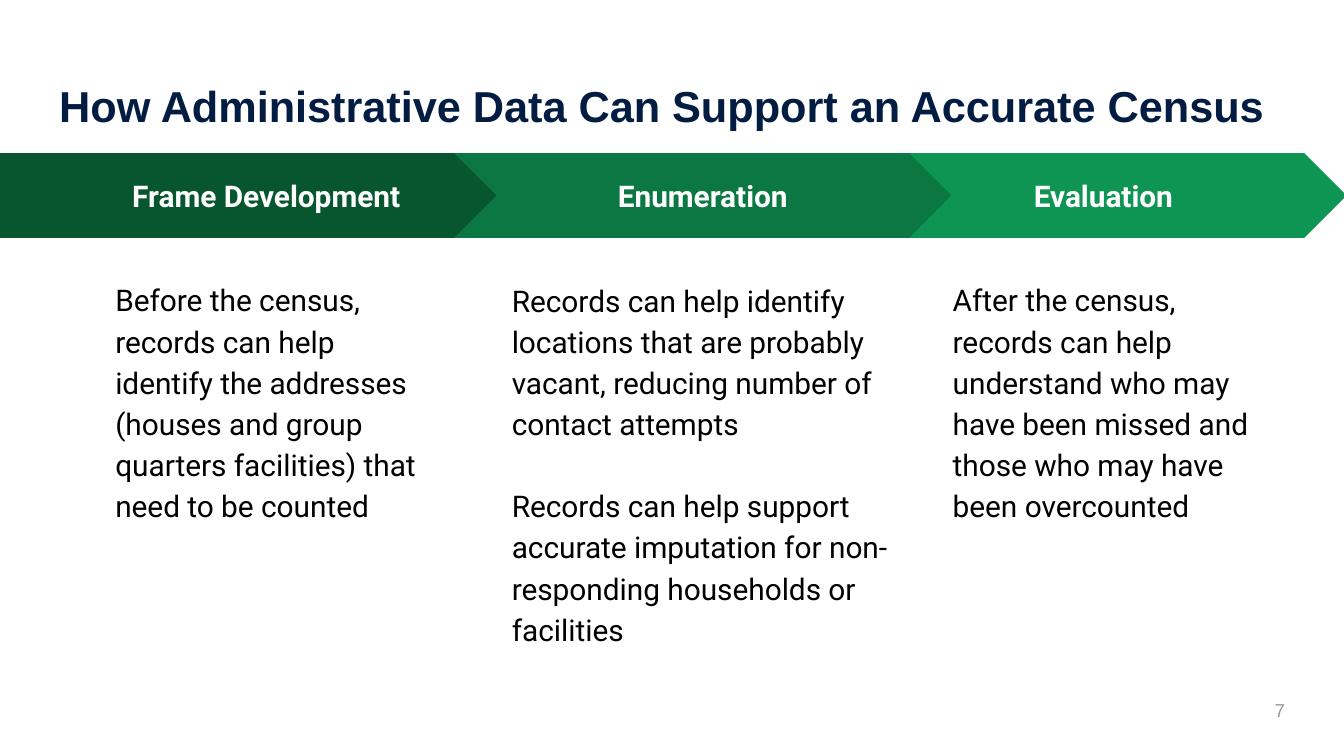
"""Build the slide on how administrative data can support an accurate census."""
from pptx import Presentation
from pptx.dml.color import RGBColor
from pptx.enum.shapes import MSO_SHAPE
from pptx.enum.text import MSO_ANCHOR, MSO_AUTO_SIZE, PP_ALIGN
from pptx.util import Inches, Pt

CHEVRON, PENTAGON = MSO_SHAPE.CHEVRON, MSO_SHAPE.PENTAGON
TOP, MIDDLE = MSO_ANCHOR.TOP, MSO_ANCHOR.MIDDLE
LEFT, CENTER, RIGHT = PP_ALIGN.LEFT, PP_ALIGN.CENTER, PP_ALIGN.RIGHT
NO_AUTOFIT = MSO_AUTO_SIZE.NONE

NAVY = RGBColor(0x02, 0x1C, 0x42)
DARK_GREEN = RGBColor(0x08, 0x56, 0x30)
MID_GREEN = RGBColor(0x0B, 0x77, 0x43)
LIGHT_GREEN = RGBColor(0x0E, 0x94, 0x53)
WHITE = RGBColor(0xFF, 0xFF, 0xFF)
BLACK = RGBColor(0x00, 0x00, 0x00)
GRAY = RGBColor(0x99, 0x99, 0x99)

SLIDE_WIDTH = Inches(10)
SLIDE_HEIGHT = SLIDE_WIDTH * 9 // 16
ARROW_TOP, ARROW_HEIGHT = 1.14, 0.63
BODY_TOP = 1.96

STAGES = [
    ("Evaluation", CHEVRON, LIGHT_GREEN, (6.4, 3.62), (6.99, 2.45, 2.47), [
        "After the census, records can help understand who may have been missed "
        "and those who may have been overcounted"]),
    ("Frame Development", PENTAGON, DARK_GREEN, (0, 4.12), (0.76, 2.6, 2.47), [
        "Before the census, records can help identify the addresses (houses and "
        "group quarters facilities) that need to be counted"]),
    ("Enumeration", CHEVRON, MID_GREEN, (3.38, 3.7), (3.71, 3.04, 3.29), [
        "Records can help identify locations that are probably vacant, reducing "
        "number of contact attempts",
        "Records can help support accurate imputation for non-responding "
        "households or facilities"]),
]


def prepare_frame(shape, anchor):
    """Set wrapping, insets and anchor, and return the text frame."""
    frame = shape.text_frame
    frame.word_wrap = True
    frame.auto_size = NO_AUTOFIT
    frame.vertical_anchor = anchor
    frame.margin_left = frame.margin_right = Inches(0.1)
    frame.margin_top = frame.margin_bottom = Inches(0.1)
    return frame


def add_run(paragraph, text, size, color, font="Roboto", bold=False, align=LEFT):
    """Add one formatted run to an aligned paragraph."""
    paragraph.alignment = align
    run = paragraph.add_run()
    run.text = text
    run.font.name = font
    run.font.size = Pt(size)
    run.font.bold = bold
    run.font.color.rgb = color


def set_title(slide, text):
    """Place and format the title placeholder."""
    title = slide.shapes.title
    title.left, title.top = Inches(0.34), Inches(0.49)
    title.width, title.height = Inches(9.32), Inches(0.63)
    frame = prepare_frame(title, TOP)
    add_run(frame.paragraphs[0], text, 23.2, NAVY, "Arial", bold=True)


def add_arrow(slide, preset, label, color, left, width):
    """Add one labelled stage arrow."""
    shape = slide.shapes.add_shape(
        preset, Inches(left), Inches(ARROW_TOP), Inches(width), Inches(ARROW_HEIGHT))
    shape.adjustments[0] = 0.5
    shape.shadow.inherit = False
    shape.fill.solid()
    shape.fill.fore_color.rgb = color
    shape.line.fill.background()
    frame = prepare_frame(shape, MIDDLE)
    add_run(frame.paragraphs[0], label, 16, WHITE, bold=True, align=CENTER)


def add_body(slide, texts, left, width, height):
    """Add the explanation below a stage arrow."""
    box = slide.shapes.add_textbox(
        Inches(left), Inches(BODY_TOP), Inches(width), Inches(height))
    frame = prepare_frame(box, TOP)
    for index, text in enumerate(texts):
        paragraph = frame.add_paragraph() if index else frame.paragraphs[0]
        paragraph.line_spacing = 1.15
        paragraph.space_before = Pt(22 if index else 0)
        add_run(paragraph, text, 16, BLACK)


def add_page_number(slide, number):
    """Add the page number at the bottom right."""
    box = slide.shapes.add_textbox(Inches(9.21), Inches(5.07), Inches(0.45), Inches(0.43))
    frame = prepare_frame(box, MIDDLE)
    add_run(frame.paragraphs[0], number, 10, GRAY, "Arial", align=RIGHT)


def main():
    """Create and save the presentation."""
    presentation = Presentation()
    presentation.slide_width = SLIDE_WIDTH
    presentation.slide_height = SLIDE_HEIGHT
    slide = presentation.slides.add_slide(presentation.slide_layouts[5])
    set_title(slide, "How Administrative Data Can Support an Accurate Census")
    add_page_number(slide, "7")
    for label, preset, color, arrow, body, texts in STAGES:
        add_arrow(slide, preset, label, color, *arrow)
        add_body(slide, texts, *body)
    presentation.save("out.pptx")


if __name__ == "__main__":
    main()
